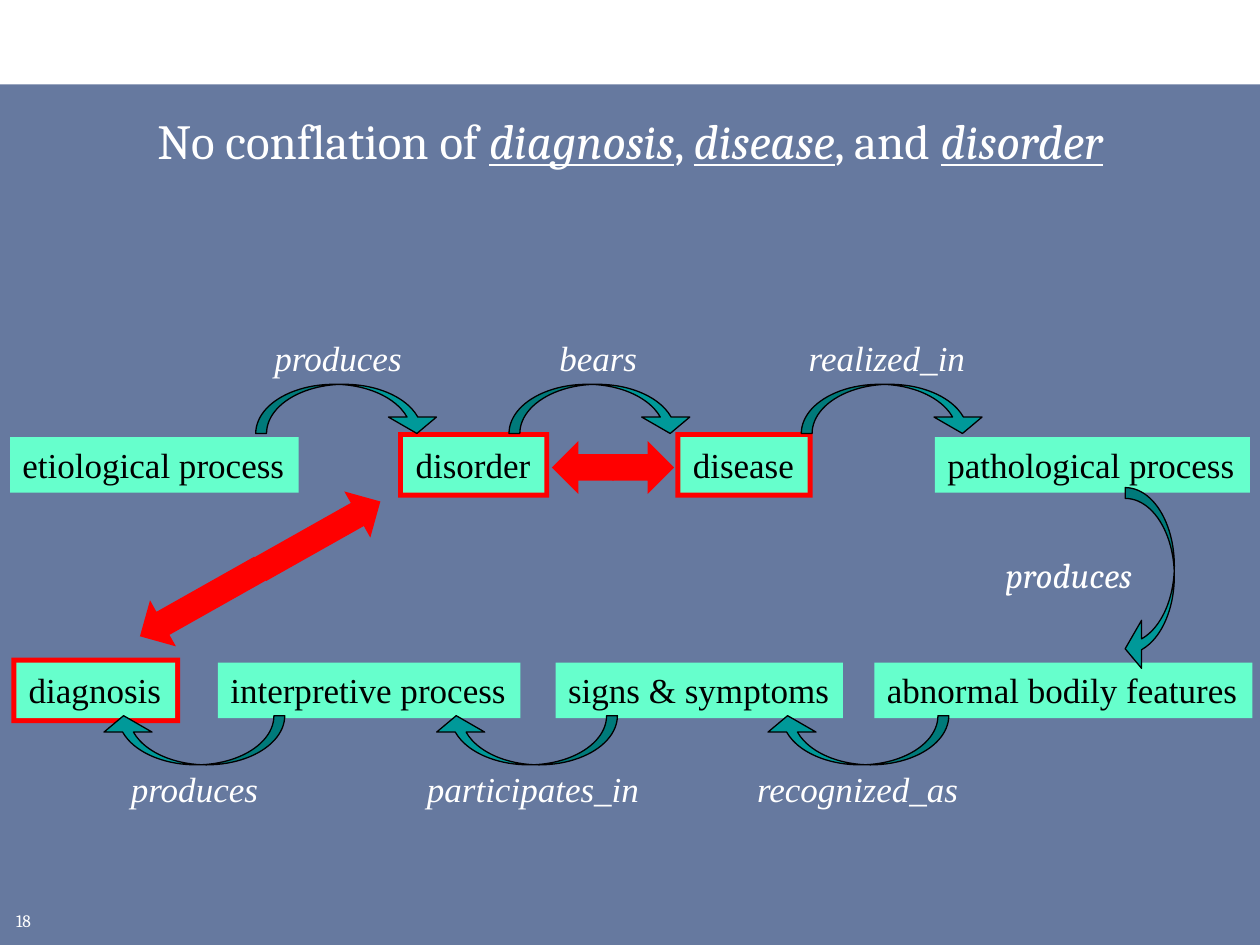
from lxml import etree
from pptx import Presentation
from pptx.dml.color import RGBColor
from pptx.enum import shapes, text
from pptx.oxml.ns import qn
from pptx.util import Inches, Pt

KIND = shapes.MSO_SHAPE
SERIF, ROMAN = "Cambria", "Times New Roman"
WHITE, BLACK, RED, MINT, TEAL, NAVY = (
    "FFFFFF", "000000", "FF0000", "66FFCC", "009999", "002060")

# Content: title pieces with their emphasis
TITLE = [("No conflation of ", False), ("diagnosis", True), (", ", False),
         ("disease", True), (", and ", False), ("disorder", True)]

# Each row: top, then (term, left, width, framed in red)
ROWS = [
    (3.47, [("etiological process", 0.08, 2.29, False),
            ("disorder", 3.2, 1.12, True),
            ("disease", 5.4, 1.01, True),
            ("pathological process", 7.42, 2.5, False)]),
    (5.26, [("abnormal bodily features", 6.94, 3, False),
            ("signs & symptoms", 4.41, 2.28, False),
            ("interpretive process", 1.73, 2.4, False),
            ("diagnosis", 0.13, 1.26, True)]),
]

# Each relation set: label top, arc top, turn, then (label, left, width, arc left, font)
LINKS = [
    (2.62, 3.05, 0, [("produces", 2.08, 1.22, 2.03, ROMAN),
                     ("bears", 4.34, 0.82, 4.04, ROMAN),
                     ("realized_in", 6.32, 1.45, 6.36, ROMAN)]),
    (6.04, 5.68, 180, [("produces", 0.94, 1.22, 0.79, ROMAN),
                       ("participates_in", 3.29, 1.9, 3.43, ROMAN),
                       ("recognized_as", 5.91, 1.81, 6.06, ROMAN)]),
    (4.34, 4.41, 90, [("produces", 7.88, 1.22, 8.39, SERIF)]),
]

# Halves of the red double arrows: kind, left, top, width, turn
HALVES = [(KIND.RIGHT_ARROW, 1.99, 4.04, 1.1, 330.6),
          (KIND.LEFT_ARROW, 1.04, 4.57, 1.1, 330.6),
          (KIND.RIGHT_ARROW, 4.86, 3.5, 0.49, 0),
          (KIND.LEFT_ARROW, 4.38, 3.5, 0.49, 0)]

BOX_H, ARC_W, ARC_H, HALF_H = 0.44, 1.47, 0.39, 0.42
EDGE = 0.04  # red frame around a term

deck = Presentation()
deck.slide_width, deck.slide_height = Inches(10), Inches(7.5)
slide = deck.slides.add_slide(deck.slide_layouts[5])


def color(code):
    return RGBColor.from_string(code)


def style(run, font=ROMAN, size=20, ink=WHITE, italic=False, under=False):
    run.font.name, run.font.size = font, Pt(size)
    run.font.color.rgb = color(ink)
    run.font.italic, run.font.underline = italic, under


def label(words, left, top, width, height=BOX_H, fill=None, **form):
    box = slide.shapes.add_textbox(*map(Inches, (left, top, width, height)))
    box.text_frame.word_wrap = False
    if fill:
        box.fill.solid()
        box.fill.fore_color.rgb = color(fill)
    run = box.text_frame.paragraphs[0].add_run()
    run.text = words
    style(run, **form)


def draw(kind, left, top, width, height, fill, line=None, turn=0):
    item = slide.shapes.add_shape(kind, *map(Inches, (left, top, width, height)))
    item.shadow.inherit = False
    item.rotation = turn
    item.fill.solid()
    item.fill.fore_color.rgb = color(fill)
    if line:
        item.line.color.rgb = color(line)
        item.line.width = Pt(0.75)
    else:
        item.line.fill.background()
    return item


# Background panel, 60 % opaque, and page number
panel = draw(KIND.RECTANGLE, 0, 0.67, 10, 6.83, NAVY)
tint = panel.fill._xPr.find(qn("a:solidFill"))[0]
etree.SubElement(tint, qn("a:alpha")).set("val", "60000")
label("18", 0.03, 7.17, 0.39, 0.25, font=SERIF, size=10)

# Title, brought in front of the panel
title = slide.shapes.title
title.left, title.top, title.width, title.height = map(
    Inches, (0.25, 0.83, 9.5, 0.83))
title.text_frame.vertical_anchor = text.MSO_ANCHOR.TOP
head = title.text_frame.paragraphs[0]
head.alignment = text.PP_ALIGN.CENTER
for words, strong in TITLE:
    run = head.add_run()
    run.text = words
    style(run, font=SERIF, size=28, italic=strong, under=strong)
slide.shapes._spTree.append(title._element)

# Red double arrows
for kind, left, top, width, turn in HALVES:
    draw(kind, left, top, width, HALF_H, RED, turn=turn)

# Terms, some with a red frame
for top, terms in ROWS:
    for words, left, width, framed in terms:
        if framed:
            draw(KIND.RECTANGLE, left - EDGE, top - EDGE,
                 width + 2 * EDGE, BOX_H + 2 * EDGE, RED)
        label(words, left, top, width, fill=MINT, ink=BLACK)

# Relations: label and curved arrow
for top, arc_top, turn, links in LINKS:
    for words, left, width, arc_left, font in links:
        label(words, left, top, width, font=font, italic=True)
        arc = draw(KIND.CURVED_DOWN_ARROW, arc_left, arc_top, ARC_W, ARC_H,
                   TEAL, BLACK, turn)
        for i, value in enumerate((0.22, 0.978, 0.333)):
            arc.adjustments[i] = value

deck.save("out.pptx")
